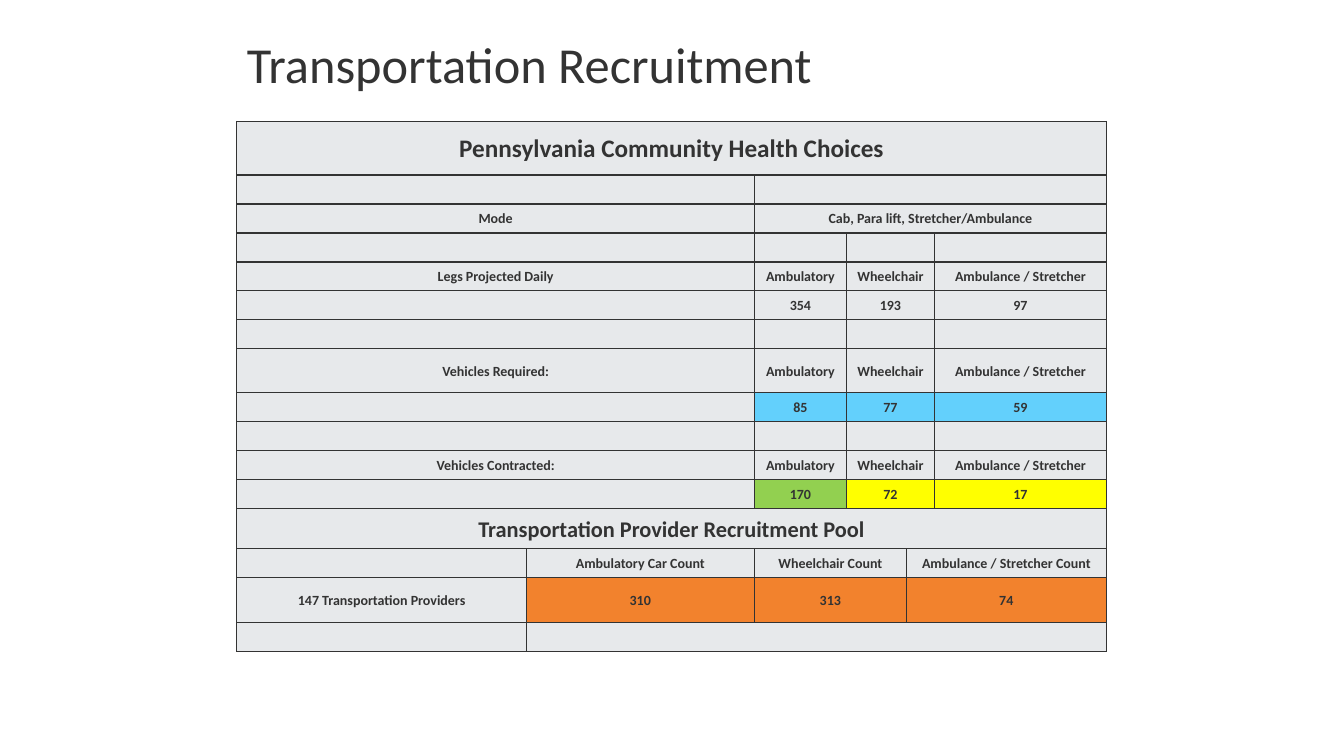
from pptx import Presentation
from pptx.dml.color import RGBColor
from pptx.enum.text import MSO_ANCHOR, PP_ALIGN
from pptx.oxml import parse_xml
from pptx.oxml.ns import nsdecls
from pptx.util import Cm, Pt

MIDDLE = MSO_ANCHOR.MIDDLE
LEFT, CENTER = PP_ALIGN.LEFT, PP_ALIGN.CENTER

HUES = {"ink": "333333", "gray": "E7E9EB", "blue": "63D0FC",
        "green": "92D050", "yellow": "FFFF00", "orange": "F2822D"}

COLS = [7.29, 5.75, 2.32, 1.51, 0.71, 4.33]
LOW = 0.73
FULL, HALF, SPLIT = [0], [0, 2], [0, 2, 3, 5]
POOL, FOOT = [0, 1, 2, 4], [0, 1]
MODES = ["Ambulatory", "Wheelchair", "Ambulance / Stretcher"]

ROWS = [
    (1.35, 18, FULL, ["Pennsylvania Community Health Choices"], []),
    (LOW, 10, HALF, [], []),
    (LOW, 10, HALF, ["Mode", "Cab, Para lift, Stretcher/Ambulance"], []),
    (LOW, 10, SPLIT, [], []),
    (LOW, 10, SPLIT, ["Legs Projected Daily", *MODES], []),
    (LOW, 10, SPLIT, ["", "354", "193", "97"], []),
    (LOW, 10, SPLIT, [], []),
    (1.11, 10, SPLIT, ["Vehicles Required:", *MODES], []),
    (LOW, 10, SPLIT, ["", "85", "77", "59"], ["gray"] + ["blue"] * 3),
    (LOW, 10, SPLIT, [], []),
    (LOW, 10, SPLIT, ["Vehicles Contracted:", *MODES], []),
    (LOW, 10, SPLIT, ["", "170", "72", "17"],
     ["gray", "green", "yellow", "yellow"]),
    (1.01, 16, FULL, ["Transportation Provider Recruitment Pool"], []),
    (LOW, 10, POOL, ["", "Ambulatory Car Count", "Wheelchair Count",
                     "Ambulance / Stretcher Count"], []),
    (1.13, 10, POOL, ["147 Transportation Providers", "310", "313", "74"],
     ["gray"] + ["orange"] * 3),
    (LOW, 10, FOOT, [], []),
]


def apply(item, form):
    """Set each named format value on an item."""
    for name, value in form.items():
        setattr(item, name, value)


class Deck:
    """Hold the style and the current slide."""

    def __init__(self):
        """Start a wide deck with one titled slide."""
        self.show = Presentation()
        apply(self.show, {"slide_width": Cm(33.87), "slide_height": Cm(19.05)})
        self.slide = self.show.slides.add_slide(self.show.slide_layouts[5])
        self.face = "Calibri"

    def label(self, para, text, size, bold, align):
        """Put one formatted run into a paragraph."""
        para.alignment = align
        if not text:
            para._p.get_or_add_endParaRPr().set("sz", str(size * 100))
            return
        run = para.add_run()
        run.text = text
        apply(run.font, {"name": self.face, "size": Pt(size), "bold": bold})
        run.font.color.rgb = RGBColor.from_string(HUES["ink"])

    def title(self, text):
        """Place the slide title."""
        shape = self.slide.shapes.title
        apply(shape, {"left": Cm(5.97), "top": Cm(0.33),
                      "width": Cm(21.89), "height": Cm(2.72)})
        shape.text_frame.vertical_anchor = MIDDLE
        para = shape.text_frame.paragraphs[0]
        para.line_spacing = 0.9
        self.label(para, text, 36, False, LEFT)

    def paint(self, cell, hue):
        """Give a cell its borders, margins and fill."""
        apply(cell, {"vertical_anchor": MIDDLE, "margin_left": Cm(0.03),
                     "margin_right": Cm(0.03), "margin_top": Cm(0.03),
                     "margin_bottom": 0})
        props = cell._tc.get_or_add_tcPr()
        for side in "LRTB":
            props.append(parse_xml(
                f'<a:ln{side} {nsdecls("a")} w="12700"><a:solidFill>'
                f'<a:srgbClr val="{HUES["ink"]}"/></a:solidFill></a:ln{side}>'))
        cell.fill.solid()
        cell.fill.fore_color.rgb = RGBColor.from_string(HUES[hue])

    def table(self, left, top, cols, rows):
        """Build a table whose rows each list their cell starts."""
        high = sum(row[0] for row in rows)
        grid = self.slide.shapes.add_table(
            len(rows), len(cols), Cm(left), Cm(top),
            Cm(sum(cols)), Cm(high)).table
        apply(grid, {"first_row": False, "horz_banding": False})
        for col, width in zip(grid.columns, cols):
            col.width = Cm(width)
        for r, (height, size, starts, texts, hues) in enumerate(rows):
            grid.rows[r].height = Cm(height)
            texts = texts or [""] * len(starts)
            hues = hues or ["gray"] * len(starts)
            ends = starts[1:] + [len(cols)]
            for start, end, text, hue in zip(starts, ends, texts, hues):
                for c in range(start, end):
                    self.paint(grid.cell(r, c), hue)
                cell = grid.cell(r, start)
                if end - start > 1:
                    cell.merge(grid.cell(r, end - 1))
                para = cell.text_frame.paragraphs[0]
                self.label(para, text, size, True, CENTER)


def main():
    """Build the recruitment slide."""
    deck = Deck()
    deck.title("Transportation Recruitment")
    deck.table(5.97, 3.06, COLS, ROWS)
    deck.show.save("out.pptx")


if __name__ == "__main__":
    main()
